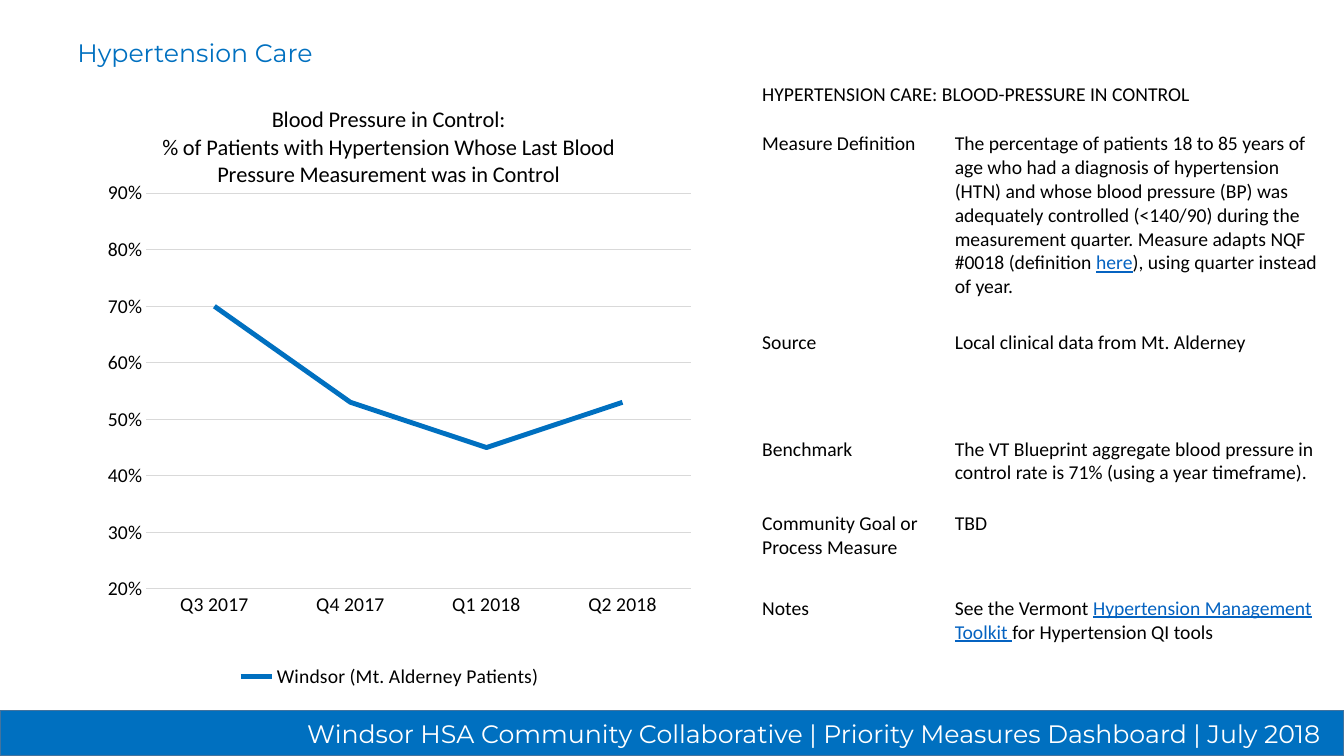
from lxml.etree import SubElement
from pptx import Presentation
from pptx.chart.data import CategoryChartData
from pptx.dml.color import RGBColor
from pptx.enum.chart import XL_CHART_TYPE, XL_LEGEND_POSITION, XL_TICK_MARK
from pptx.enum.shapes import MSO_SHAPE
from pptx.enum.text import MSO_ANCHOR, PP_ALIGN
from pptx.oxml.ns import qn
from pptx.util import Inches, Pt

WIDTH, HEIGHT = 13.33, 7.5
BLUE, BLACK, WHITE = "0070C0", "000000", "FFFFFF"
GRID_GREY, LINK_BLUE, FOOTER_EDGE = "D9D9D9", "0563C1", "43739E"
BODY_FONT, HEADING_FONT = "Calibri", "Montserrat"

CLINIC = "Mt. Alderney"
HEADING = "HYPERTENSION CARE: BLOOD-PRESSURE IN CONTROL"
LABEL_WIDTH, DETAIL_WIDTH = 1.91, 3.88
ROW_HEIGHTS = [0.49, 1.97, 1.06, 0.74, 0.84, 1.06]
MEASURE_FACTS = [
    ("Measure Definition", [
        "The percentage of patients 18 to 85 years of age who had a diagnosis of "
        "hypertension (HTN) and whose blood pressure (BP) was adequately controlled "
        "(<140/90) during the measurement quarter. Measure adapts NQF #0018 (definition ",
        "here",
        "), using quarter instead of year."]),
    ("Source", [f"Local clinical data from {CLINIC}"]),
    ("Benchmark", ["The VT Blueprint aggregate blood pressure in control rate is 71% "
                   "(using a year timeframe)."]),
    ("Community Goal or Process Measure", ["TBD"]),
    ("Notes", ["See the Vermont ", "Hypertension Management Toolkit ",
               "for Hypertension QI tools"]),
]
LINKED_WORDS = {"here", "Hypertension Management Toolkit "}


def paint(color_format, hex_color):
    """Apply a hex colour to a colour format."""
    color_format.rgb = RGBColor.from_string(hex_color)


def style_font(font, size, color=BLACK, family=BODY_FONT):
    """Set size, colour and family of a font in regular weight."""
    font.size, font.name, font.bold = Pt(size), family, False
    paint(font.color, color)


def style_line(line, color, width):
    """Give a line its colour and width."""
    paint(line.color, color)
    line.width = Pt(width)


def set_layout(element, index, **shares):
    """Place a chart part by shares of the chart's size."""
    for old in element.findall(qn("c:layout")):
        element.remove(old)
    layout = SubElement(element, qn("c:layout"))
    element.insert(index, layout)
    manual = SubElement(layout, qn("c:manualLayout"))
    if "w" in shares:
        SubElement(manual, qn("c:layoutTarget")).set("val", "inner")
    for side in ("x", "y"):
        SubElement(manual, qn(f"c:{side}Mode")).set("val", "edge")
    for side, share in shares.items():
        SubElement(manual, qn(f"c:{side}")).set("val", str(share))


def add_title(slide):
    """Fill and format the slide title."""
    title = slide.shapes.title
    title.left, title.top = Inches(WIDTH * 0.05), Inches(0.32)
    title.width, title.height = Inches(8.23), Inches(0.4)
    frame = title.text_frame
    frame.text = "Hypertension Care"
    frame.vertical_anchor = MSO_ANCHOR.TOP
    frame.paragraphs[0].alignment = PP_ALIGN.LEFT
    style_font(frame.paragraphs[0].font, 18, BLUE, HEADING_FONT)


def style_axes(chart):
    """Format the quarter axis and the percentage axis."""
    quarters, rates = chart.category_axis, chart.value_axis
    for axis in (quarters, rates):
        axis.major_tick_mark = axis.minor_tick_mark = XL_TICK_MARK.NONE
        style_font(axis.tick_labels.font, 14)
    style_line(quarters.format.line, GRID_GREY, 0.75)
    rates.format.line.fill.background()
    rates.minimum_scale, rates.maximum_scale, rates.major_unit = 0.2, 0.9, 0.1
    rates.tick_labels.number_format = "0%"
    rates.tick_labels.number_format_is_linked = False
    style_line(rates.major_gridlines.format.line, GRID_GREY, 0.75)


def add_control_chart(slide):
    """Draw the quarterly share of patients in control."""
    data = CategoryChartData(number_format="0%")
    data.categories = ["Q3 2017", "Q4 2017", "Q1 2018", "Q2 2018"]
    data.add_series(f"Windsor ({CLINIC} Patients)", [0.7, 0.53, 0.45, 0.53])
    chart = slide.shapes.add_chart(
        XL_CHART_TYPE.LINE, Inches(0.69), Inches(0.83), Inches(6.35), Inches(6.04), data).chart
    style_font(chart.font, 10)
    style_axes(chart)

    heading = chart.chart_title
    heading.text_frame.text = (
        "Blood Pressure in Control:\n% of Patients with Hypertension Whose Last Blood "
        "Pressure Measurement was in Control")
    for paragraph in heading.text_frame.paragraphs:
        style_font(paragraph.font, 16)
    set_layout(heading._element, 1, x=0.14, y=0.03)
    set_layout(chart._chartSpace.chart.plotArea, 0, x=0.12, y=0.18, w=0.85, h=0.65)

    chart.has_legend = True
    chart.legend.position = XL_LEGEND_POSITION.BOTTOM
    chart.legend.include_in_layout = False
    style_font(chart.legend.font, 14)
    chart.plots[0].vary_by_categories = False
    control_rate = chart.plots[0].series[0]
    control_rate.smooth = False
    style_line(control_rate.format.line, BLUE, 3.5)


def fill_cell(cell, pieces):
    """Write text pieces into a cell, marking the linked words."""
    cell.fill.background()
    paragraph = cell.text_frame.paragraphs[0]
    style_font(paragraph.font, 14)
    for piece in pieces:
        run = paragraph.add_run()
        run.text = piece
        if piece in LINKED_WORDS:
            run.font.underline = True
            paint(run.font.color, LINK_BLUE)


def add_measure_table(slide):
    """Lay out the facts about the measure."""
    table = slide.shapes.add_table(
        len(ROW_HEIGHTS), 2, Inches(7.46), Inches(0.77),
        Inches(LABEL_WIDTH + DETAIL_WIDTH), Inches(sum(ROW_HEIGHTS))).table
    table.first_row = table.horz_banding = False
    for column, width in zip(table.columns, (LABEL_WIDTH, DETAIL_WIDTH)):
        column.width = Inches(width)
    for row, height in zip(table.rows, ROW_HEIGHTS):
        row.height = Inches(height)
    table.cell(0, 0).merge(table.cell(0, 1))
    fill_cell(table.cell(0, 0), [HEADING])
    fill_cell(table.cell(0, 1), [])
    for index, (label, details) in enumerate(MEASURE_FACTS, start=1):
        fill_cell(table.cell(index, 0), [label])
        fill_cell(table.cell(index, 1), details)


def add_footer(slide):
    """Draw the dashboard band along the bottom edge."""
    band_height = HEIGHT * 0.06
    band = slide.shapes.add_shape(
        MSO_SHAPE.RECTANGLE, 0, Inches(HEIGHT - band_height), Inches(WIDTH), Inches(band_height))
    band.shadow.inherit = False
    band.fill.solid()
    paint(band.fill.fore_color, BLUE)
    style_line(band.line, FOOTER_EDGE, 1)
    frame = band.text_frame
    frame.text = "Windsor HSA Community Collaborative | Priority Measures Dashboard | July 2018"
    frame.vertical_anchor = MSO_ANCHOR.MIDDLE
    frame.margin_right = Inches(0.23)
    frame.paragraphs[0].alignment = PP_ALIGN.RIGHT
    style_font(frame.paragraphs[0].font, 18, WHITE, HEADING_FONT)


def main():
    """Build and save the dashboard slide."""
    deck = Presentation()
    deck.slide_width, deck.slide_height = Inches(WIDTH), Inches(HEIGHT)
    slide = deck.slides.add_slide(deck.slide_layouts[5])
    add_control_chart(slide)
    add_title(slide)
    add_measure_table(slide)
    add_footer(slide)
    deck.save("out.pptx")


if __name__ == "__main__":
    main()
